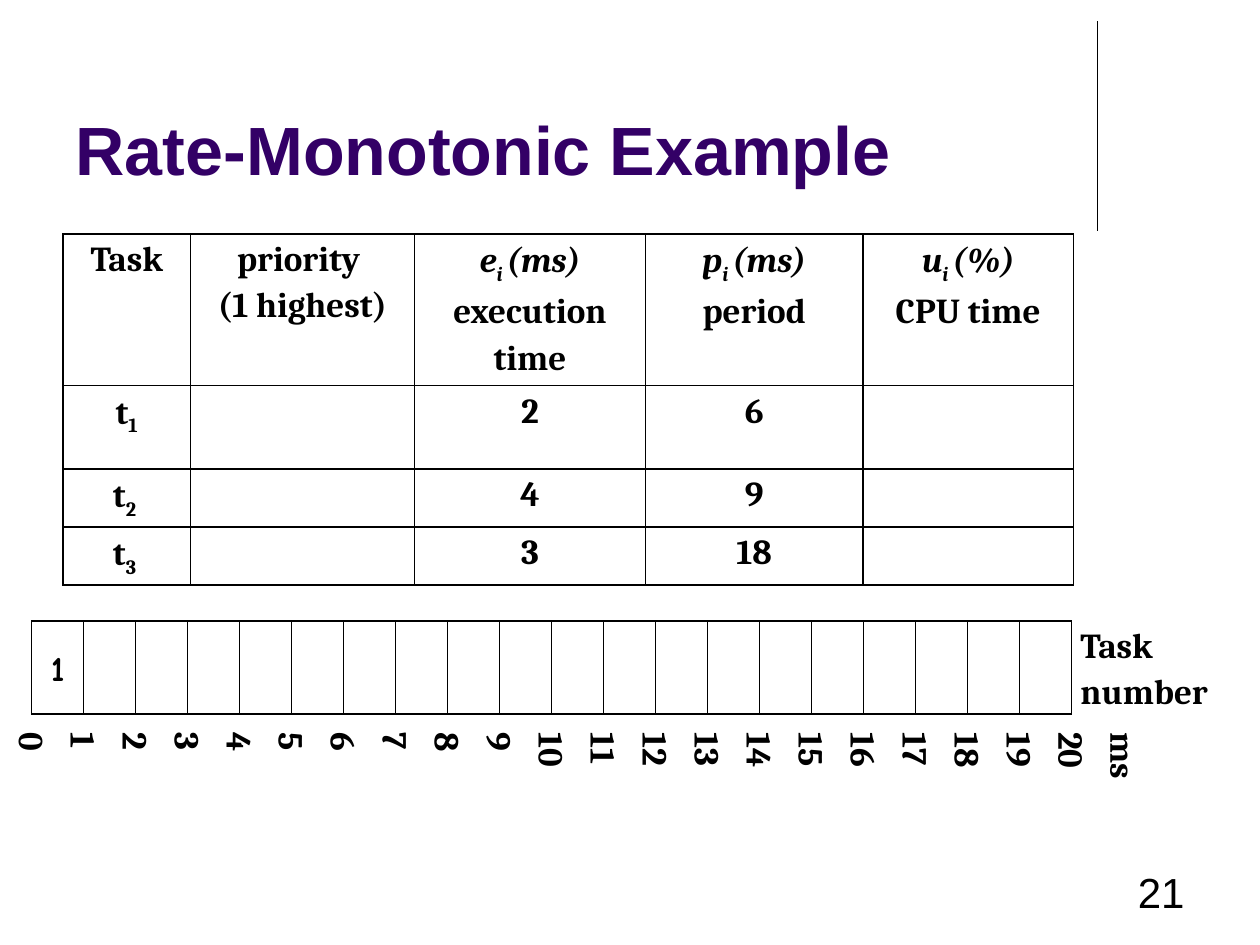
"""Build the rate-monotonic scheduling example slide."""
from pptx import Presentation
from pptx.dml.color import RGBColor
from pptx.enum.shapes import MSO_CONNECTOR
from pptx.enum.text import MSO_ANCHOR, MSO_AUTO_SIZE, PP_ALIGN
from pptx.oxml.ns import qn
from pptx.util import Cm, Pt
from lxml import etree

STRAIGHT = MSO_CONNECTOR.STRAIGHT
TOP, MIDDLE, BOTTOM = MSO_ANCHOR.TOP, MSO_ANCHOR.MIDDLE, MSO_ANCHOR.BOTTOM
LEFT, CENTER, RIGHT = PP_ALIGN.LEFT, PP_ALIGN.CENTER, PP_ALIGN.RIGHT
BLACK, PURPLE = "000000", "330066"
SUB = {"baseline": -25}
ITALIC = {"italic": True}
ITALIC_SUB = {**SUB, **ITALIC}
TASKS = [("1", "2", "6"), ("2 ", "4", "9"), ("3 ", "3", "18")]
SLOTS = 20


def color(value):
    """Turn a hex string into a colour."""
    return RGBColor.from_string(value)


def add_text(p, text, font="Cambria", size=20, fill=BLACK, bold=True,
             italic=False, baseline=0):
    """Append formatted text to a paragraph, breaking lines at newlines."""
    for i, line in enumerate(text.split("\n")):
        if i:
            p.add_line_break()
        if not line:
            continue
        r = p.add_run()
        r.text = line
        r.font.name, r.font.size = font, Pt(size)
        r.font.bold, r.font.italic = bold, italic
        r.font.color.rgb = color(fill)
        if baseline:
            r.font._element.set("baseline", str(baseline * 1000))


def set_borders(cell, sides):
    """Draw the named cell borders and clear the others."""
    tc_pr = cell._tc.get_or_add_tcPr()
    for i, side in enumerate("LRTB"):
        ln = etree.Element(qn(f"a:ln{side}"), w=str(Pt(1)))
        if side in sides:
            fill = etree.SubElement(ln, qn("a:solidFill"))
            etree.SubElement(fill, qn("a:srgbClr"), val=BLACK)
        else:
            etree.SubElement(ln, qn("a:noFill"))
        tc_pr.insert(i, ln)


def fill_cell(cell, paragraphs=(), align=CENTER, anchor=TOP, sides="LRTB",
              vertical=False):
    """Format a cell and write paragraphs of (text, format) runs."""
    cell.fill.background()
    cell.margin_left = cell.margin_right = Cm(0.18)
    cell.margin_top = cell.margin_bottom = 0
    cell.vertical_anchor = anchor
    set_borders(cell, sides)
    if vertical:
        cell._tc.tcPr.set("vert", "vert")
    tf = cell.text_frame
    for i, runs in enumerate(paragraphs):
        p = tf.add_paragraph() if i else tf.paragraphs[0]
        p.alignment, p.line_spacing = align, 1.15
        for text, style in runs:
            add_text(p, text, **style)


def add_grid(s, left, top, widths, heights):
    """Add a plain table with the given column widths and row heights in cm."""
    table = s.shapes.add_table(len(heights), len(widths), Cm(left), Cm(top),
                               Cm(sum(widths)), Cm(sum(heights))).table
    table.first_row = table.horz_banding = False
    for column, width in zip(table.columns, widths):
        column.width = Cm(width)
    for row, height in zip(table.rows, heights):
        row.height = Cm(height)
    return table


def plain(text):
    """Return one paragraph holding one unstyled run."""
    return [[(text, {})]]


def symbol(letter, unit):
    """Return the runs of an italic symbol with subscript i and its unit."""
    return [(letter, ITALIC), ("i ", ITALIC_SUB), (unit, ITALIC)]


def add_task_table(s):
    """Add the table of tasks with execution time and period."""
    rows = [[plain("Task"), plain("priority \n(1 highest)"),
             [symbol("e", "(ms)\n") + [("execution time", {})]],
             [symbol("p", "(ms)"), [("period", {})]],
             [symbol("u", "(%)"), [("CPU time", {})]]]]
    for number, execution, period in TASKS:
        rows.append([[[("t", {}), (number, SUB)]], (), plain(execution),
                     plain(period), ()])
    table = add_grid(s, 1.27, 4.72, [2.57, 4.52, 4.65, 4.39, 4.24],
                     [2.31, 1.68, 1.17, 1.17])
    for r, row in enumerate(rows):
        for c, paragraphs in enumerate(row):
            fill_cell(table.cell(r, c), paragraphs)


def add_timeline(s):
    """Add the row of time slots and the tick labels below it."""
    slots = add_grid(s, 0.64, 12.52, [20.96 / SLOTS] * SLOTS + [3.81], [1.45])
    first = [[("1", {"font": "Comic Neue"})]]
    for i in range(SLOTS):
        fill_cell(slots.cell(0, i), () if i else first, anchor=MIDDLE)
    fill_cell(slots.cell(0, SLOTS), plain("Task number"), LEFT, MIDDLE, "L")

    labels = [str(i) for i in range(SLOTS + 1)] + ["ms"]
    ticks = add_grid(s, 0.2, 14.58, [23.06 / len(labels)] * len(labels), [2.34])
    for i, label in enumerate(labels):
        fill_cell(ticks.cell(0, i), plain(label), LEFT, sides="", vertical=True)


def add_rule(s):
    """Add the thin vertical line beside the title."""
    line = s.shapes.add_connector(STRAIGHT, Cm(22.12), Cm(0.43), Cm(22.12), Cm(4.65))
    line.line.color.rgb = color(BLACK)
    line.line.width = Pt(0.75)
    etree.SubElement(line._element.spPr, qn("a:effectLst"))


def add_title(s, text):
    """Place and write the slide title."""
    sp = s.shapes.title
    sp.left, sp.top, sp.width, sp.height = Cm(1.27), Cm(0.33), Cm(20.96), Cm(3.61)
    tf = sp.text_frame
    tf.auto_size, tf.vertical_anchor = MSO_AUTO_SIZE.NONE, BOTTOM
    p = tf.paragraphs[0]
    p.alignment = LEFT
    add_text(p, text, font="Arial", size=39, fill=PURPLE)


def add_page_number(s, text):
    """Add the page number at the lower right."""
    tf = s.shapes.add_textbox(Cm(18.21), Cm(17.35), Cm(5.92), Cm(1.27)).text_frame
    tf.word_wrap = True
    p = tf.paragraphs[0]
    p.alignment = RIGHT
    add_text(p, text, font="Arial", size=24, bold=False)


def main():
    """Build and save the slide."""
    prs = Presentation()
    prs.slide_width, prs.slide_height = Cm(25.4), Cm(19.05)
    s = prs.slides.add_slide(prs.slide_layouts[5])
    add_rule(s)
    add_title(s, "Rate-Monotonic Example")
    add_timeline(s)
    add_page_number(s, "21")
    add_task_table(s)
    prs.save("out.pptx")


if __name__ == "__main__":
    main()
